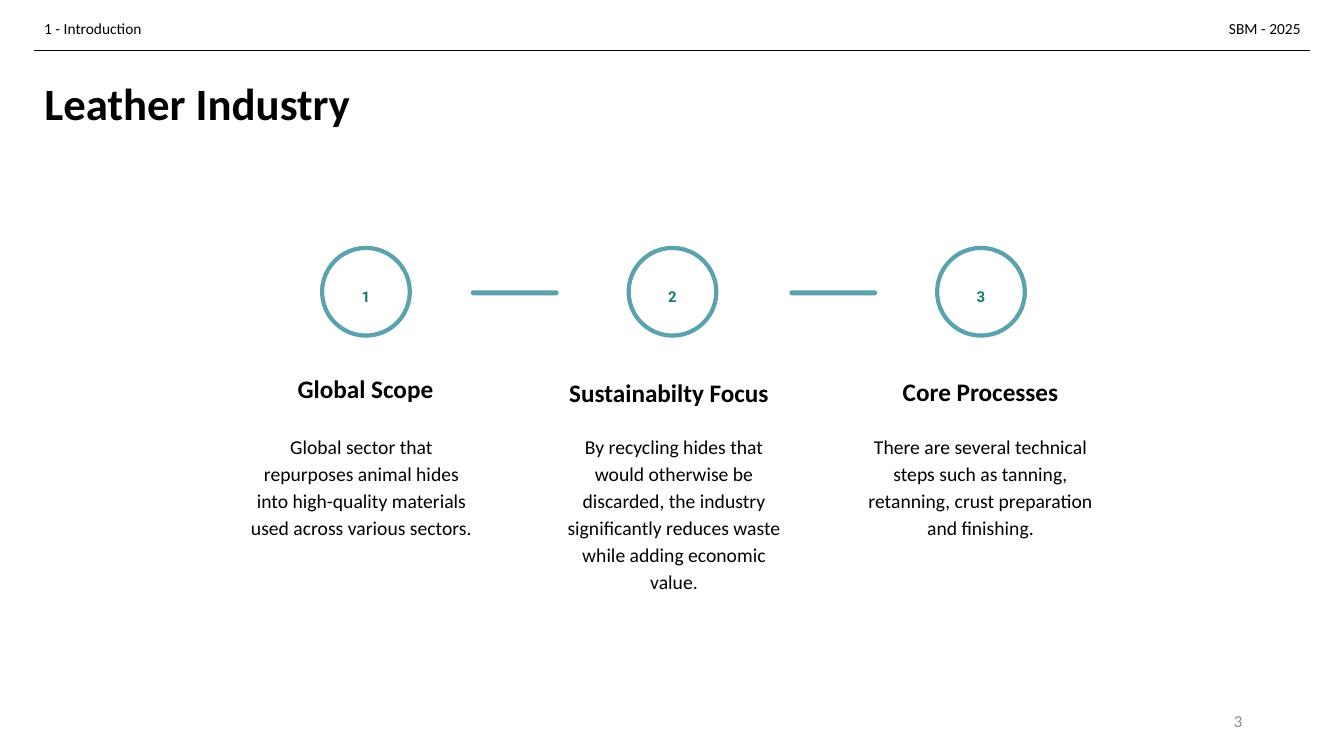
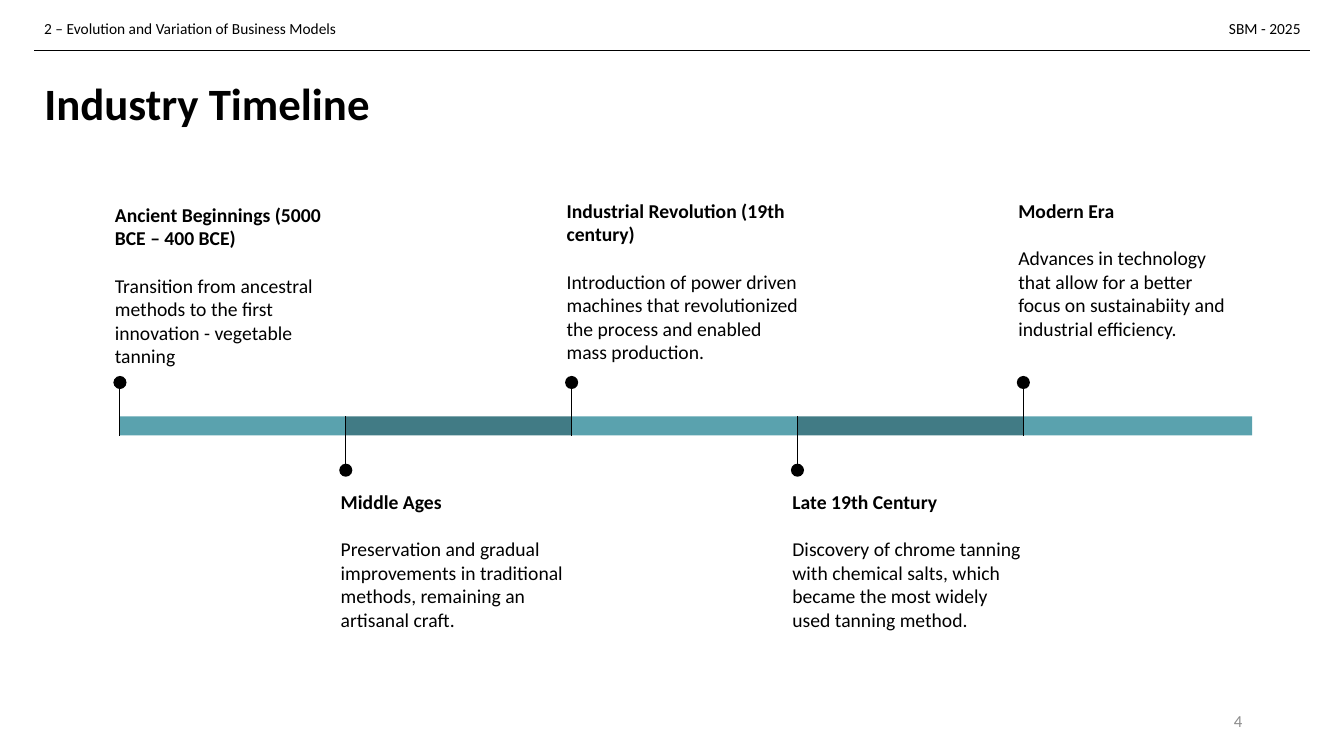
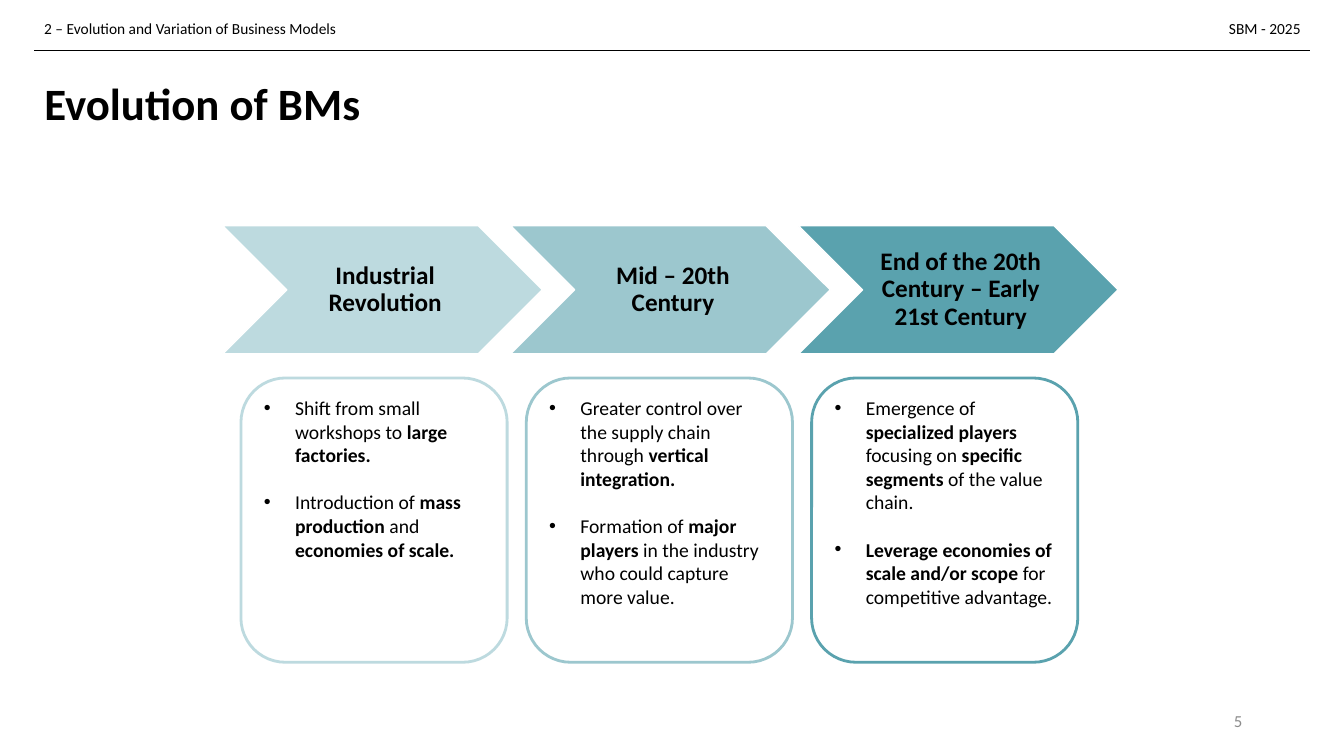
from lxml import etree
from pptx import Presentation
from pptx.dml.color import RGBColor
from pptx.enum import shapes as kinds, text as txt
from pptx.oxml import ns
from pptx.util import Inches, Pt

BLACK = RGBColor(0x00, 0x00, 0x00)
WHITE = RGBColor(0xFF, 0xFF, 0xFF)
GREY = RGBColor(0x8C, 0x8C, 0x8C)
TEAL = RGBColor(0x5A, 0xA2, 0xAE)
DARK_TEAL = RGBColor(0x41, 0x7B, 0x85)
MID_TEAL = RGBColor(0x9C, 0xC7, 0xCE)
PALE_TEAL = RGBColor(0xBD, 0xDA, 0xDF)
GREEN = RGBColor(0x1B, 0x78, 0x6F)

LEFT, CENTER, RIGHT = txt.PP_ALIGN.LEFT, txt.PP_ALIGN.CENTER, txt.PP_ALIGN.RIGHT
TOP, MIDDLE, BOTTOM = txt.MSO_ANCHOR.TOP, txt.MSO_ANCHOR.MIDDLE, txt.MSO_ANCHOR.BOTTOM
SHAPE = kinds.MSO_SHAPE
STRAIGHT = kinds.MSO_CONNECTOR.STRAIGHT
BLANK_LINE = 17  # points, one line of 14 pt text
WIDE_INSETS = (0.13, 0.13, 0.13, 0.13)


def write(shape, paragraphs, size, color=BLACK, font="Calibri", align=LEFT, anchor=TOP,
          insets=(0.1, 0.05, 0.1, 0.05), spacing=None, gap=0, bullet=False):
    """Fill a shape with paragraphs, each a list of (text, bold) runs."""
    frame = shape.text_frame
    frame.word_wrap = True
    frame.auto_size = txt.MSO_AUTO_SIZE.NONE
    frame.vertical_anchor = anchor
    frame.margin_left, frame.margin_top, frame.margin_right, frame.margin_bottom = map(Inches, insets)
    for i, runs in enumerate(paragraphs):
        paragraph = frame.add_paragraph() if i else frame.paragraphs[0]
        if bullet:
            props = paragraph._p.get_or_add_pPr()
            props.set("marL", str(Inches(0.31)))
            props.set("indent", str(-Inches(0.31)))
            etree.SubElement(props, ns.qn("a:buFont"), typeface="Arial")
            etree.SubElement(props, ns.qn("a:buChar"), char="•")
        paragraph.alignment = align
        if spacing:
            paragraph.line_spacing = spacing
        if i:
            paragraph.space_before = Pt(gap)
        for words, bold in runs:
            run = paragraph.add_run()
            run.text = words
            run.font.name, run.font.size, run.font.bold = font, Pt(size), bold
            run.font.color.rgb = color


def paint(shape, fill=None, line=None, width=1):
    """Set fill and outline of a shape or connector and drop its shadow."""
    if fill is not None:
        shape.fill.solid()
        shape.fill.fore_color.rgb = fill
    elif hasattr(shape, "fill"):
        shape.fill.background()
    if line is None:
        shape.line.fill.background()
    else:
        shape.line.color.rgb = line
        shape.line.width = Pt(width)
    etree.SubElement(shape._element.spPr, ns.qn("a:effectLst"))


prs = Presentation()
prs.slide_width, prs.slide_height = Inches(13.33), Inches(7.5)

# Shared header, title and page number
MODELS = "2 – Evolution and Variation of Business Models"
pages = [("1 - Introduction", "Leather Industry"),
         (MODELS, "Industry Timeline"),
         (MODELS, "Evolution of BMs")]
slides = []
for number, (section, title) in enumerate(pages, start=3):
    slide = prs.slides.add_slide(prs.slide_layouts[5])
    heading = slide.shapes.title
    heading.left, heading.top, heading.width, heading.height = map(Inches, (0.34, 0.5, 11.5, 1.11))
    write(heading, [[(title, True)]], 32, anchor=MIDDLE, spacing=0.9)
    rule = slide.shapes.add_connector(STRAIGHT, Inches(0.34), Inches(0.5), Inches(12.99), Inches(0.5))
    paint(rule, line=BLACK, width=0.25)
    for words, box, size, color, align, anchor in [
            (section, (0.34, 0.14, 6, 0.29), 11, BLACK, LEFT, TOP),
            ("SBM - 2025", (11, 0.14, 2, 0.29), 11, BLACK, RIGHT, TOP),
            (str(number), (9.42, 6.95, 3, 0.4), 12, GREY, RIGHT, MIDDLE)]:
        label = slide.shapes.add_textbox(*map(Inches, box))
        write(label, [[(words, False)]], size, color, align=align, anchor=anchor)
    slides.append(slide)
industry, timeline, evolution = slides

# Leather Industry: circle centre, heading position, body left
topics = [
    (3.63, 2.38, 3.48, 2.34, "Global Scope",
     "Global sector that repurposes animal hides into high-quality materials used across various sectors."),
    (6.67, 5.39, 3.52, 5.44, "Sustainabilty Focus",
     "By recycling hides that would otherwise be discarded, the industry significantly reduces waste "
     "while adding economic value."),
    (9.73, 8.48, 3.51, 8.48, "Core Processes",
     "There are several technical steps such as tanning, retanning, crust preparation and finishing."),
]
CIRCLE = 0.87
for number, (center, name_left, name_top, body_left, name, body) in enumerate(topics, start=1):
    circle = industry.shapes.add_shape(SHAPE.OVAL, Inches(center - CIRCLE / 2), Inches(2.46),
                                       Inches(CIRCLE), Inches(CIRCLE))
    paint(circle, line=TEAL, width=3)
    write(circle, [[(str(number), True)]], 10.7, GREEN, "Roboto", CENTER, MIDDLE, (0, 0.1, 0, 0))
    name_box = industry.shapes.add_textbox(Inches(name_left), Inches(name_top), Inches(2.49), Inches(0.65))
    write(name_box, [[(name, True)]], 18, align=CENTER, anchor=BOTTOM, insets=WIDE_INSETS, spacing=1.15)
    body_box = industry.shapes.add_textbox(Inches(body_left), Inches(4.15), Inches(2.49), Inches(1.42))
    write(body_box, [[(body, False)]], 14, align=CENTER, insets=WIDE_INSETS, spacing=1.15)
for left in (4.67, 7.83):
    link = industry.shapes.add_shape(SHAPE.ROUNDED_RECTANGLE, Inches(left), Inches(2.88),
                                     Inches(0.87), Inches(0.05))
    link.adjustments[0] = 0.5
    paint(link, TEAL)

# Industry Timeline: text top and width, era, event; eras alternate above and below the bar
eras = [
    (1.88, 2.6, "Ancient Beginnings (5000 BCE – 400 BCE)",
     "Transition from ancestral methods to the first innovation - vegetable tanning"),
    (4.73, 2.6, "Middle Ages",
     "Preservation and gradual improvements in traditional methods, remaining an artisanal craft."),
    (1.84, 2.6, "Industrial Revolution (19th century)",
     "Introduction of power driven machines that revolutionized the process and enabled mass production."),
    (4.73, 2.6, "Late 19th Century",
     "Discovery of chrome tanning with chemical salts, which became the most widely used tanning method."),
    (1.84, 2.42, "Modern Era",
     "Advances in technology that allow for a better focus on sustainabiity and industrial efficiency."),
]
STEP, DOT = 2.24, 0.13
for i, (top, width, era, event) in enumerate(eras):
    x = 1.19 + STEP * i
    below = i % 2
    segment_width = 2.27 if i == len(eras) - 1 else STEP
    segment = timeline.shapes.add_shape(SHAPE.RECTANGLE, Inches(x), Inches(4.13),
                                        Inches(segment_width), Inches(0.19))
    paint(segment, DARK_TEAL if below else TEAL)
    stem_top, stem_bottom, dot_top = (4.13, 4.66, 4.6) if below else (3.8, 4.33, 3.73)
    stem = timeline.shapes.add_connector(STRAIGHT, Inches(x), Inches(stem_top), Inches(x), Inches(stem_bottom))
    paint(stem, line=BLACK, width=0.75)
    dot = timeline.shapes.add_shape(SHAPE.OVAL, Inches(x - DOT / 2), Inches(dot_top), Inches(DOT), Inches(DOT))
    paint(dot, BLACK)
    note = timeline.shapes.add_textbox(Inches(x - 0.18), Inches(top), Inches(width), Inches(1.38))
    write(note, [[(era, True)], [(event, False)]], 14, insets=WIDE_INSETS, gap=BLANK_LINE)

# Evolution of BMs: colour, period, points
periods = [
    (PALE_TEAL, "Industrial Revolution", [
        [("Shift from small workshops to ", False), ("large factories.", True)],
        [("Introduction of ", False), ("mass production ", True), ("and ", False),
         ("economies of scale.", True)]]),
    (MID_TEAL, "Mid – 20th Century", [
        [("Greater control over the supply chain through ", False), ("vertical integration.", True)],
        [("Formation of ", False), ("major players", True),
         (" in the industry who could capture more value.", False)]]),
    (TEAL, "End of the 20th Century – Early 21st Century", [
        [("Emergence of ", False), ("specialized players ", True), ("focusing on ", False),
         ("specific segments ", True), ("of the value chain.", False)],
        [("Leverage economies of scale and/or scope ", True), ("for competitive advantage.", False)]]),
]
for i, (color, period, points) in enumerate(periods):
    arrow = evolution.shapes.add_shape(SHAPE.CHEVRON, Inches(2.21 + 2.855 * i), Inches(2.24),
                                       Inches(3.17), Inches(1.27))
    paint(arrow, color, WHITE)
    write(arrow, [[(period, True)]], 18, align=CENTER, anchor=MIDDLE,
          insets=(0.08, 0.03, 0.03, 0.03), spacing=0.9)
    card = evolution.shapes.add_shape(SHAPE.ROUNDED_RECTANGLE, Inches(2.39 + 2.83 * i), Inches(3.75),
                                      Inches(2.64), Inches(2.82))
    paint(card, line=color, width=2)
    write(card, points, 14, gap=BLANK_LINE, bullet=True)

prs.save("out.pptx")
